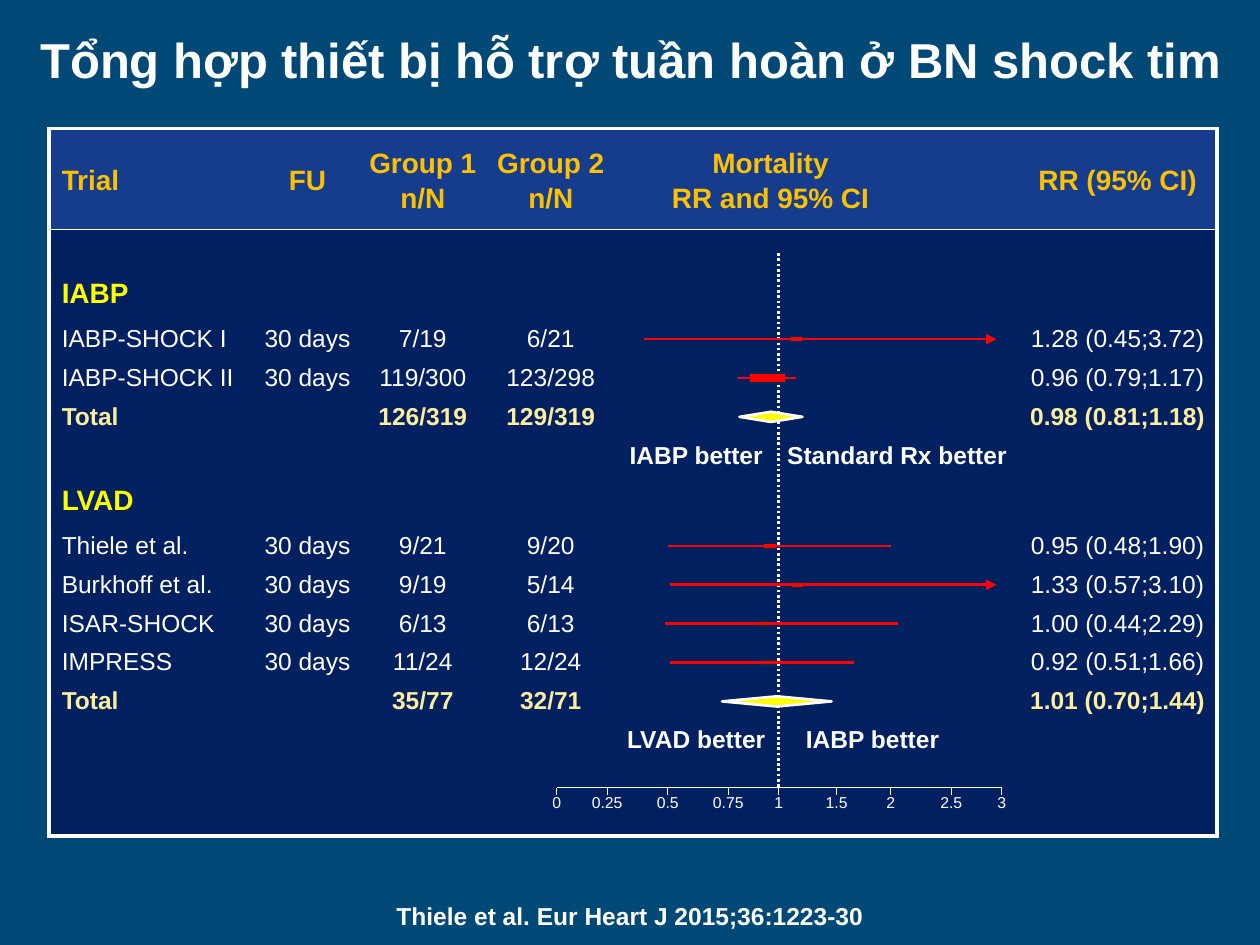
from lxml import etree
from pptx import Presentation
from pptx import util as u
from pptx.dml.color import RGBColor
from pptx.enum import dml, shapes, text
from pptx.oxml import ns

WHITE, GOLD, YELLOW, CREAM, RED = "FFFFFF", "FFC000", "FFFF00", "FEEE9E", "FF0000"
TEAL, BLUE, NAVY, EDGE = "004976", "153C8D", "002060", "002E4B"
NO_GRID = "{2D5ABB26-0587-4C30-8999-92F81FD0307C}"

TABLE_LEFT, TABLE_TOP = 28.1, 73.6
COLUMN_WIDTHS = [117.4, 60.5, 71.3, 74.9, 91.4, 138.2, 113.8]
HEADER_HEIGHT, GROUP_HEIGHT, ROW_HEIGHT, AXIS_HEIGHT = 57.5, 29.4, 22.2, 43.7
AXIS_Y, NO_EFFECT_X = 450, 445

HEADER = ["Trial", "FU", "Group 1\nn/N", "Group 2\nn/N", "Mortality\nRR and 95% CI", "", "RR (95% CI)"]
# Each row: kind, then the cell texts by column.
ROWS = [
    ("header", HEADER),
    ("blank", []),
    ("group", ["IABP"]),
    ("study", ["IABP-SHOCK I", "30 days", "7/19", "6/21", "", "", "1.28 (0.45;3.72)"]),
    ("study", ["IABP-SHOCK II", "30 days", "119/300", "123/298", "", "", "0.96 (0.79;1.17)"]),
    ("total", ["Total", "", "126/319", "129/319", "", "", "0.98 (0.81;1.18)"]),
    ("sides", ["", "", "", "", "IABP better", "Standard Rx better"]),
    ("group", ["LVAD"]),
    ("study", ["Thiele et al.", "30 days", "9/21", "9/20", "", "", "0.95 (0.48;1.90)"]),
    ("study", ["Burkhoff et al.", "30 days", "9/19", "5/14", "", "", "1.33 (0.57;3.10)"]),
    ("study", ["ISAR-SHOCK", "30 days", "6/13", "6/13", "", "", "1.00 (0.44;2.29)"]),
    ("study", ["IMPRESS", "30 days", "11/24", "12/24", "", "", "0.92 (0.51;1.66)"]),
    ("total", ["Total", "", "35/77", "32/71", "", "", "1.01 (0.70;1.44)"]),
    ("sides", ["", "", "", "", "LVAD better", "IABP better"]),
    ("axis", []),
]
ROW_FORMATS = {
    "header": dict(size=16, color=GOLD, bold=True, spacing=1.14),
    "group": dict(size=16, color=YELLOW, bold=True),
    "study": dict(size=14, color=WHITE),
    "total": dict(size=14, color=CREAM, bold=True),
    "sides": dict(size=14, color=WHITE, bold=True),
}
SPECIAL_HEIGHTS = {"header": HEADER_HEIGHT, "group": GROUP_HEIGHT, "axis": AXIS_HEIGHT}
ROW_HEIGHTS = [SPECIAL_HEIGHTS.get(kind, ROW_HEIGHT) for kind, _ in ROWS]

# Row: interval start, interval end, estimate, marker width, marker height, runs off the scale
INTERVALS = {
    3: (368, 569.5, 455, 7.2, 2.9, True),
    4: (422, 455, 438.8, 20.9, 5.8, False),
    8: (381.6, 509, 440, 7.2, 2.9, False),
    9: (383, 569.5, 455.8, 7.2, 2.9, True),
    10: (380.2, 513.4, 436.3, 7.2, 2.9, False),
    11: (383, 488.2, 439.2, 7.2, 2.9, False),
}
TOTALS = {5: (422.6, 36), 12: (412.6, 62.6)}
TICKS = {"0": 318.2, "0.25": 347, "0.5": 381.6, "0.75": 416.2, "1": 445,
         "1.5": 478.1, "2": 509, "2.5": 543.6, "3": 572.4}


def rgb(value):
    return RGBColor.from_string(value)


def write(frame, content, size=14, color=WHITE, bold=False, align="CENTER", spacing=None):
    """Fill a text frame, one paragraph for each line of content."""
    for index, line in enumerate(content.split("\n")):
        paragraph = frame.add_paragraph() if index else frame.paragraphs[0]
        paragraph.alignment = getattr(text.PP_ALIGN, align)
        if spacing:
            paragraph.line_spacing = spacing
        run = paragraph.add_run()
        run.text = line
        run.font.name, run.font.size, run.font.bold = "Arial", u.Pt(size), bold
        run.font.color.rgb = rgb(color)


def row_middle(row):
    return TABLE_TOP + sum(ROW_HEIGHTS[:row]) + ROW_HEIGHTS[row] / 2


def set_borders(cell, widths):
    """Draw white borders; sides missing from widths get none."""
    properties = cell._tc.get_or_add_tcPr()
    for side in "LRTB":
        line = etree.SubElement(properties, ns.qn(f"a:ln{side}"), w=str(u.Pt(widths.get(side, 0))))
        if side in widths:
            fill = etree.SubElement(line, ns.qn("a:solidFill"))
            etree.SubElement(fill, ns.qn("a:srgbClr"), val=WHITE)
        else:
            etree.SubElement(line, ns.qn("a:noFill"))


class ForestSlide:
    def __init__(self, presentation):
        self.slide = presentation.slides.add_slide(presentation.slide_layouts[5])
        self.slide.background.fill.solid()
        self.slide.background.fill.fore_color.rgb = rgb(TEAL)

    def title(self, content):
        title = self.slide.shapes.title
        title.left, title.top, title.width, title.height = map(u.Pt, (10.1, 10.1, 700.6, 59.8))
        frame = title.text_frame
        frame.auto_size, frame.word_wrap = text.MSO_AUTO_SIZE.NONE, True
        frame.vertical_anchor = text.MSO_ANCHOR.TOP
        frame.margin_left = frame.margin_right = u.Pt(3.6)
        frame.margin_top = u.Pt(6.6)
        write(frame, content, size=28, bold=True)

    def label(self, content, center, top, width, height, wrap=True, **style):
        box = self.slide.shapes.add_textbox(*map(u.Pt, (center - width / 2, top, width, height)))
        box.text_frame.word_wrap = wrap
        write(box.text_frame, content, **style)

    def line(self, x1, y1, x2, y2, color=WHITE, width=0.75, dotted=False, arrow=False):
        line = self.slide.shapes.add_connector(
            shapes.MSO_CONNECTOR.STRAIGHT, *map(u.Pt, (x1, y1, x2, y2)))
        line.line.color.rgb, line.line.width = rgb(color), u.Pt(width)
        if dotted:
            line.line.dash_style = dml.MSO_LINE.ROUND_DOT
        if arrow:
            etree.SubElement(line.line._get_or_add_ln(), ns.qn("a:tailEnd"), type="triangle")
        etree.SubElement(line._element.spPr, ns.qn("a:effectLst"))

    def marker(self, kind, left, middle, width, height, fill, edge, edge_width):
        marker = self.slide.shapes.add_shape(
            kind, *map(u.Pt, (left, middle - height / 2, width, height)))
        marker.shadow.inherit = False
        marker.fill.solid()
        marker.fill.fore_color.rgb = rgb(fill)
        marker.line.color.rgb, marker.line.width = rgb(edge), u.Pt(edge_width)

    def table(self):
        frame = self.slide.shapes.add_table(
            len(ROWS), len(COLUMN_WIDTHS),
            *map(u.Pt, (TABLE_LEFT, TABLE_TOP, sum(COLUMN_WIDTHS), sum(ROW_HEIGHTS))))
        trials = frame.table
        trials.first_row = trials.horz_banding = False
        trials._tbl.tblPr.find(ns.qn("a:tableStyleId")).text = NO_GRID
        for column, width in zip(trials.columns, COLUMN_WIDTHS):
            column.width = u.Pt(width)
        trials.cell(0, 4).merge(trials.cell(0, 5))
        for row, (kind, contents) in enumerate(ROWS):
            trials.rows[row].height = u.Pt(ROW_HEIGHTS[row])
            for column in range(len(COLUMN_WIDTHS)):
                content = contents[column] if column < len(contents) else ""
                self.cell(trials.cell(row, column), row, column, kind, content)

    def cell(self, cell, row, column, kind, content):
        borders = {0: {"T": 2.25, "B": 1}, 1: {"T": 1}, len(ROWS) - 1: {"B": 2.25}}.get(row, {})
        sides = {0: {"L": 2.25}, len(COLUMN_WIDTHS) - 1: {"R": 2.25}}.get(column, {})
        set_borders(cell, borders | sides)
        cell.fill.solid()
        cell.fill.fore_color.rgb = rgb(BLUE if kind == "header" else NAVY)
        cell.vertical_anchor = text.MSO_ANCHOR.MIDDLE
        cell.margin_top = cell.margin_bottom = 0
        cell.margin_left = u.Pt(7.2 if column == 0 else 0.7)
        # The plot heading is centred on the effect line, not on its merged cell.
        cell.margin_right = u.Pt(54 if kind == "header" and column == 4 else 0.7)
        left_aligned = column == 0 or content == "IABP better" and column == 5
        if left_aligned and column:
            cell.margin_left = u.Pt(17)
        if content:
            write(cell.text_frame, content, align="LEFT" if left_aligned else "CENTER",
                  **ROW_FORMATS[kind])

    def axis(self):
        self.line(TICKS["0"], AXIS_Y, TICKS["3"], AXIS_Y)
        for value, x in TICKS.items():
            self.line(x, AXIS_Y, x, AXIS_Y + 4.3)
            self.label(value, x, AXIS_Y - 0.7, 50, 18, size=9)
        self.line(NO_EFFECT_X, 144.7, NO_EFFECT_X, AXIS_Y, width=1.5, dotted=True)

    def estimates(self):
        for row, (start, end, estimate, width, height, arrow) in INTERVALS.items():
            y = row_middle(row)
            self.marker(shapes.MSO_SHAPE.RECTANGLE, estimate - width / 2, y, width, height,
                        RED, EDGE, 0.75)
            self.line(start, y, end, y, color=RED, width=1.5, arrow=arrow)
        for row, (left, width) in TOTALS.items():
            self.marker(shapes.MSO_SHAPE.DIAMOND, left, row_middle(row), width, 5.8,
                        YELLOW, WHITE, 1.5)


def main():
    presentation = Presentation()
    presentation.slide_width, presentation.slide_height = u.Pt(720), u.Pt(540)
    slide = ForestSlide(presentation)
    slide.title("Tổng hợp thiết bị hỗ trợ tuần hoàn ở BN shock tim")
    slide.table()
    slide.label("Thiele et al. Eur Heart J 2015;36:1223-30", 360, 511.2, 282.2, 24.5,
                wrap=False, bold=True)
    slide.axis()
    slide.estimates()
    presentation.save("out.pptx")


if __name__ == "__main__":
    main()
